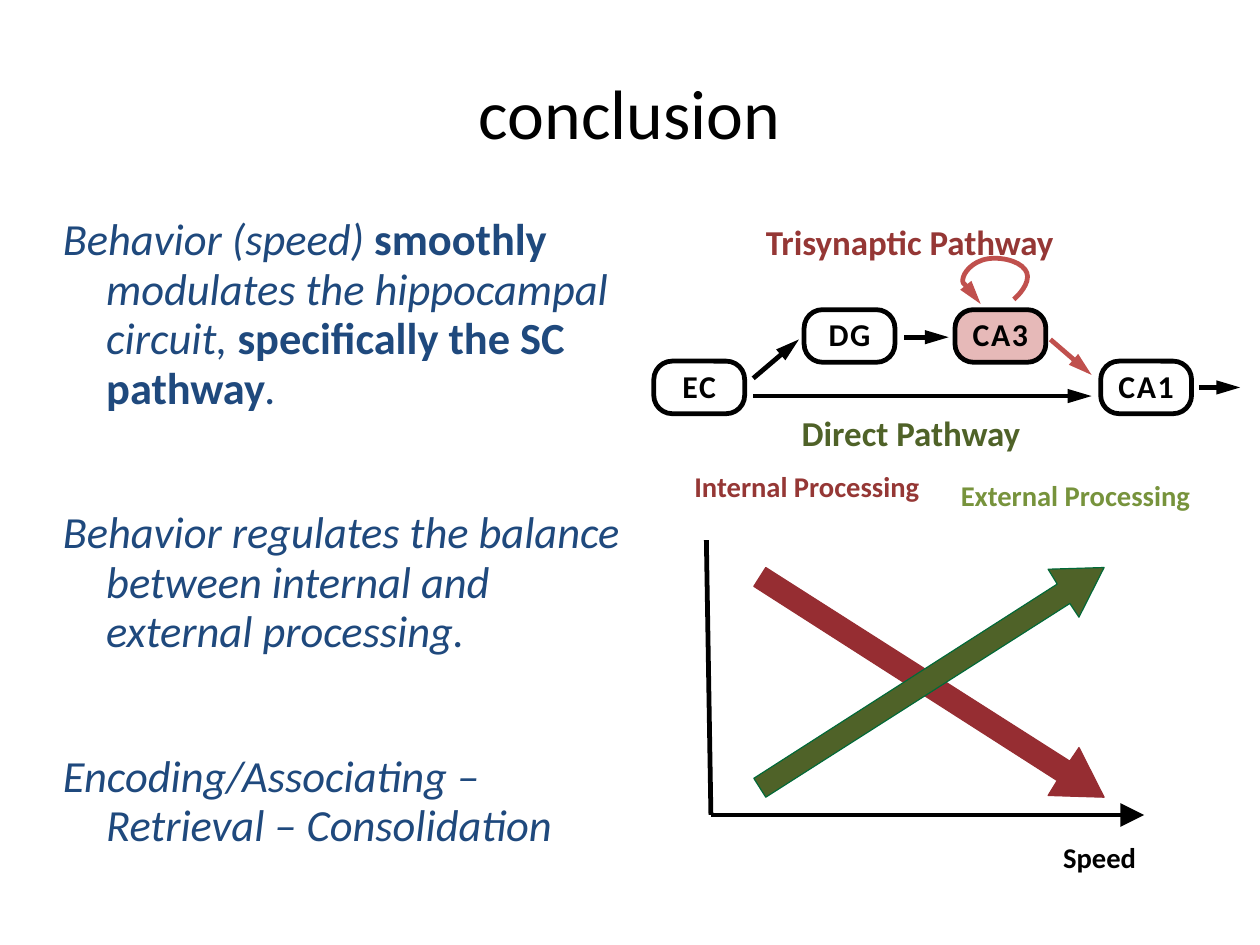
from lxml.etree import SubElement
from pptx import Presentation
from pptx.dml.color import RGBColor
from pptx.enum.shapes import MSO_CONNECTOR, MSO_SHAPE
from pptx.enum.text import MSO_ANCHOR, PP_ALIGN
from pptx.oxml.ns import qn
from pptx.util import Cm, Inches, Pt

COLORS = {
    "black": "000000", "white": "FFFFFF", "navy": "1F497D",
    "maroon": "953735", "red": "C0504D", "pink": "E6B9B8",
    "falling": "962D32", "rising": "4F6228", "rising edge": "016938",
    "leaf": "77933C",
}
CELL = Inches(0.1)
NODE_WIDTH, NODE_HEIGHT = 7.95, 4.6
UPPER_ROW, LOWER_ROW = 27.1, 31.6
MIRROR_ROWS = 119.4

NODES = [
    ("EC", 57.2, LOWER_ROW, "white"),
    ("DG", 70.35, UPPER_ROW, "white"),
    ("CA3", 83.55, UPPER_ROW, "pink"),
    ("CA1", 96.3, LOWER_ROW, "white"),
]
PATHWAYS = [
    ((65.9, 33.1), (69.9, 29.7), "black"),
    ((79.1, 29.5), (83, 29.5), "black"),
    ((91.9, 29.7), (95.5, 32.8), "red"),
    ((65.9, 34.65), (95.5, 34.65), "black"),
    ((104.9, 33.9), (108.5, 33.9), "black"),
]
RECURRENT_LOOP = [
    (88.7, 26.2), (88.7, 26.2), (89.9, 25.2), (89.9, 24.2),
    (89.9, 23.3), (88.6, 22.6), (87, 22.6),
    (85.4, 22.6), (84.5, 23.6), (84.3, 24.2),
    (84.1, 24.9), (85.8, 26.6), (85.8, 26.6),
]
FALLING_ARROW = [
    (96.6, 69.75), (94.4, 65.4), (93.6, 66.6), (67, 49.65),
    (65.95, 51.3), (92.5, 68.3), (91.7, 69.6),
]
LABELS = [
    ("Trisynaptic Pathway", 66.3, 19.3, 26.6, 22, "maroon"),
    ("Direct Pathway", 69.65, 36, 20.1, 22, "rising"),
    ("Internal Processing", 59.2, 41, 22.8, 18, "maroon"),
    ("External Processing", 82.45, 41.8, 23.3, 18, "leaf"),
    ("Speed", 91.75, 73.45, 8.9, 18, "black"),
]
FINDINGS = [
    [("Behavior (speed) ", False), ("smoothly ", True),
     ("modulates the hippocampal circuit, ", False),
     ("specifically the SC pathway", True), (".", False)],
    [("Behavior regulates the balance between internal and external processing.", False)],
    [("Encoding/Associating – Retrieval – Consolidation", False)],
]


def grid(cells):
    return int(cells * CELL)


def rgb(name):
    return RGBColor.from_string(COLORS[name])


def add_run(paragraph, text, size, color, bold=False, italic=False):
    run = paragraph.add_run()
    run.text = text
    font = run.font
    font.name, font.size, font.bold, font.italic = "Calibri", Pt(size), bold, italic
    font.color.rgb = rgb(color)
    return run


def clear_margins(frame):
    frame.margin_left = frame.margin_right = frame.margin_top = frame.margin_bottom = 0


def add_text_area(slide, *box, wrap=True, anchor=MSO_ANCHOR.MIDDLE):
    frame = slide.shapes.add_textbox(*map(grid, box)).text_frame
    clear_margins(frame)
    frame.word_wrap, frame.vertical_anchor = wrap, anchor
    return frame


def add_title(slide, text):
    heading = add_text_area(slide, 5.5, 3.25, 99.2, 13.8).paragraphs[0]
    heading.alignment, heading.line_spacing = PP_ALIGN.CENTER, 0.93
    add_run(heading, text, 44, "black")


def add_findings(slide):
    frame = add_text_area(slide, 5.5, 19.3, 49.6, 54.5)
    frame.margin_top = Inches(0.03)
    for index, phrases in enumerate(FINDINGS):
        finding = frame.add_paragraph() if index else frame.paragraphs[0]
        finding.line_spacing = 0.93
        finding.space_after = Pt(59.6 if index < len(FINDINGS) - 1 else 14.2)
        indent = finding._p.get_or_add_pPr()
        indent.set("marL", str(Inches(0.38)))
        indent.set("indent", str(-Inches(0.38)))
        for text, stressed in phrases:
            add_run(finding, text, 28, "navy", bold=stressed, italic=not stressed)


def add_label(slide, text, column, row, width, size, color):
    frame = add_text_area(slide, column, row, width, 3.7, wrap=False, anchor=MSO_ANCHOR.TOP)
    label = frame.paragraphs[0]
    label.alignment = PP_ALIGN.CENTER
    add_run(label, text, size, color, bold=True)


def add_node(slide, text, column, row, fill):
    node = slide.shapes.add_shape(
        MSO_SHAPE.ROUNDED_RECTANGLE, *map(grid, (column, row, NODE_WIDTH, NODE_HEIGHT)))
    node.adjustments[0] = 0.35
    node.shadow.inherit = False
    node.fill.solid()
    node.fill.fore_color.rgb = rgb(fill)
    node.line.color.rgb, node.line.width = rgb("black"), Pt(3)
    frame = node.text_frame
    clear_margins(frame)
    frame.word_wrap, frame.vertical_anchor = False, MSO_ANCHOR.MIDDLE
    name = frame.paragraphs[0]
    name.alignment, name.line_spacing = PP_ALIGN.CENTER, 0.93
    run = add_run(name, text, 20, "black", bold=True)
    run.font._element.set("spc", "100")


def add_arrowhead(stroke, width):
    outline = stroke._element.spPr.find(qn("a:ln"))
    SubElement(outline, qn("a:tailEnd"), type="triangle", w=width, len="lg")


def add_stroke(slide, start, end, color="black", head=None):
    stroke = slide.shapes.add_connector(
        MSO_CONNECTOR.STRAIGHT, *map(grid, (*start, *end)))
    stroke.line.color.rgb, stroke.line.width = rgb(color), Pt(3)
    if head:
        add_arrowhead(stroke, head)
    SubElement(stroke._element.spPr, qn("a:effectLst"))


def add_outline(slide, points, closed):
    start, *rest = [tuple(map(grid, point)) for point in points]
    builder = slide.shapes.build_freeform(*start)
    builder.add_line_segments(rest, close=closed)
    outline = builder.convert_to_shape()
    outline.shadow.inherit = False
    return outline


def add_recurrent_loop(slide):
    loop = add_outline(slide, RECURRENT_LOOP, closed=False)
    loop.fill.background()
    loop.line.color.rgb, loop.line.width = rgb("red"), Pt(3)
    add_arrowhead(loop, "med")
    route = next(loop._element.iter(qn("a:path")))
    steps = route.findall(qn("a:lnTo"))
    for first in range(0, len(steps), 3):
        curve = SubElement(route, qn("a:cubicBezTo"))
        for step in steps[first:first + 3]:
            curve.append(step[0])
            route.remove(step)


def add_trend(slide, points, fill, edge):
    trend = add_outline(slide, points, closed=True)
    trend.fill.solid()
    trend.fill.fore_color.rgb = rgb(fill)
    trend.line.color.rgb, trend.line.width = rgb(edge), 0


def main():
    """Build the conclusion slide with its pathway diagram and speed chart."""
    deck = Presentation()
    deck.slide_width, deck.slide_height = Cm(28), Cm(21)
    slide = deck.slides.add_slide(deck.slide_layouts[6])
    add_title(slide, "conclusion")
    add_findings(slide)
    for node in NODES:
        add_node(slide, *node)
    for start, end, color in PATHWAYS:
        add_stroke(slide, start, end, color, head="med")
    add_recurrent_loop(slide)
    origin = (62.2, 71.3)
    add_stroke(slide, (61.8, 47.25), origin)
    add_stroke(slide, origin, (100.1, 71.3), head="lg")
    rising_arrow = [(column, MIRROR_ROWS - row) for column, row in FALLING_ARROW]
    add_trend(slide, FALLING_ARROW, "falling", "falling")
    add_trend(slide, rising_arrow, "rising", "rising edge")
    for label in LABELS:
        add_label(slide, *label)
    deck.save("out.pptx")


if __name__ == "__main__":
    main()
